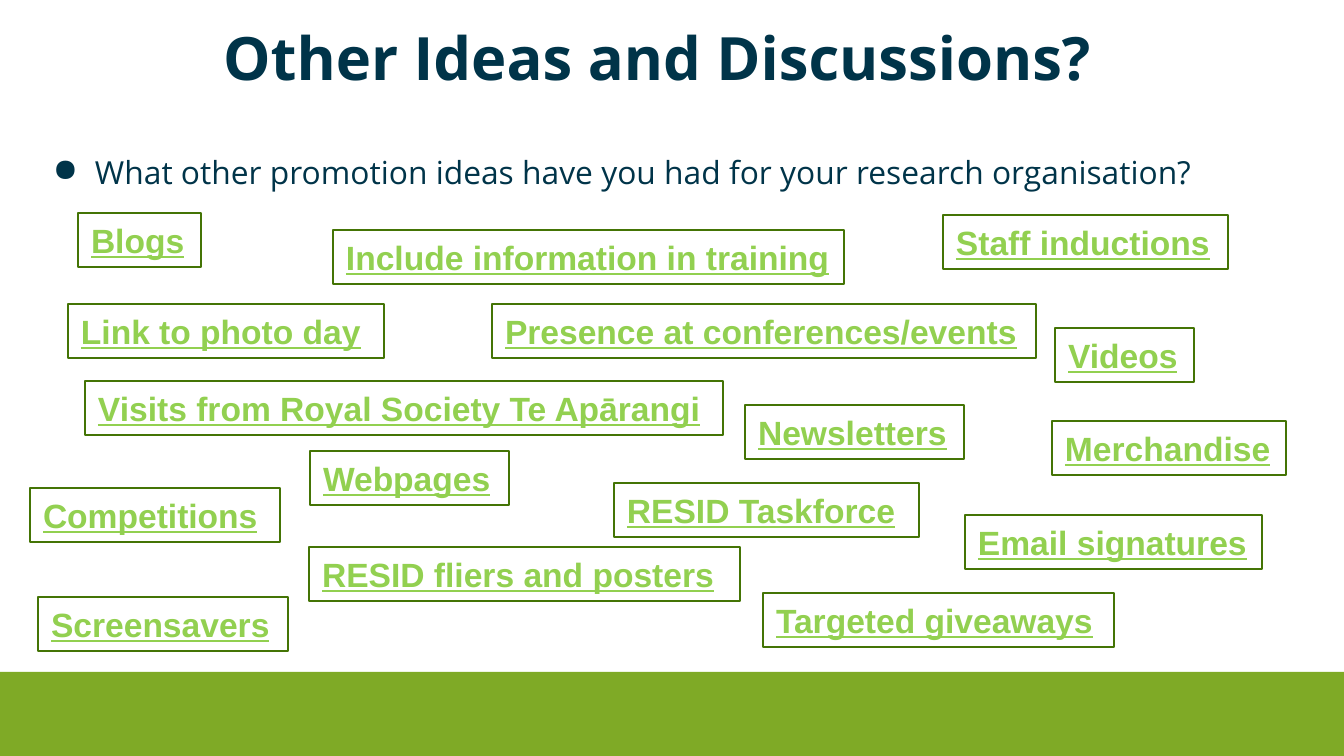
from pptx import Presentation
from pptx.dml.color import RGBColor
from pptx.enum.shapes import MSO_SHAPE
from pptx.enum.text import MSO_ANCHOR, MSO_AUTO_SIZE, PP_ALIGN
from pptx.oxml.ns import qn
from pptx.util import Pt
from lxml import etree

RECT = MSO_SHAPE.RECTANGLE
MIDDLE, TOP = MSO_ANCHOR.MIDDLE, MSO_ANCHOR.TOP
CENTER, LEFT = PP_ALIGN.CENTER, PP_ALIGN.LEFT
GROW, FIXED = MSO_AUTO_SIZE.SHAPE_TO_FIT_TEXT, MSO_AUTO_SIZE.NONE

WIDE, HIGH = 1344, 756
SCALE = 9144000 / WIDE
NAVY, GREEN, LIME, EDGE = "003449", "7FAA26", "92D050", "447405"
TAG_H = 54

# left, top, width, wording
TAGS = [
    (78, 213, 123, "Blogs"),
    (745, 405, 219, "Newsletters"),
    (310, 451, 199, "Webpages"),
    (68, 304, 316, "Link to photo day"),
    (85, 381, 638, "Visits from Royal Society Te Apārangi"),
    (30, 488, 250, "Competitions"),
    (965, 515, 297, "Email signatures"),
    (38, 597, 250, "Screensavers"),
    (614, 483, 305, "RESID Taskforce"),
    (1055, 328, 139, "Videos"),
    (1052, 421, 234, "Merchandise"),
    (492, 304, 544, "Presence at conferences/events"),
    (309, 547, 431, "RESID fliers and posters"),
    (943, 215, 285, "Staff inductions"),
    (333, 230, 511, "Include information in training"),
    (763, 593, 351, "Targeted giveaways"),
]


def px(num):
    return round(num * SCALE)


def color(code):
    return RGBColor.from_string(code)


def place(shape, box):
    shape.left, shape.top, shape.width, shape.height = map(px, box)


def set_frame(frame, pads, anchor, fit):
    frame.word_wrap = True
    frame.auto_size = fit
    frame.vertical_anchor = anchor
    (frame.margin_left, frame.margin_top,
     frame.margin_right, frame.margin_bottom) = map(px, pads)


def add_run(para, text, face, size, code, bold=False, under=False):
    run = para.add_run()
    run.text = text
    font = run.font
    font.name, font.size = face, Pt(size)
    font.bold, font.underline = bold, under
    font.color.rgb = color(code)


def add_bullet(para, mark, code, indent):
    props = para._p.get_or_add_pPr()
    props.set("marL", str(px(indent)))
    props.set("indent", str(-px(indent)))
    tint = etree.SubElement(props, qn("a:buClr"))
    etree.SubElement(tint, qn("a:srgbClr")).set("val", code)
    etree.SubElement(props, qn("a:buChar")).set("char", mark)


def add_band(slide, box):
    band = slide.shapes.add_shape(RECT, *map(px, box))
    band.shadow.inherit = False
    band.fill.solid()
    band.fill.fore_color.rgb = color(GREEN)
    band.line.fill.background()


def add_title(slide, box):
    title = slide.shapes.title
    place(title, box)
    set_frame(title.text_frame, (0, 0, 0, 0), MIDDLE, FIXED)
    para = title.text_frame.paragraphs[0]
    para.alignment = CENTER
    add_run(para, "Other Ideas and Discussions?", "Open Sans", 32, NAVY, bold=True)


def add_prompt(slide, box):
    frame = slide.shapes.add_textbox(*map(px, box)).text_frame
    set_frame(frame, (13, 13, 13, 13), TOP, FIXED)
    para = frame.paragraphs[0]
    add_bullet(para, "●", NAVY, 42)
    para.line_spacing = 1.5
    add_run(para, "What other promotion ideas have you had for your research organisation?",
            "Open Sans", 17, NAVY)


def add_tag(slide, box, text):
    """Add one outlined idea."""
    tag = slide.shapes.add_textbox(*map(px, box))
    tag.line.color.rgb = color(EDGE)
    tag.line.width = Pt(0.75)
    set_frame(tag.text_frame, (13, 7, 0, 7), TOP, GROW)
    para = tag.text_frame.paragraphs[0]
    para.alignment = LEFT
    add_run(para, text, "Arial", 18, LIME, bold=True, under=True)


def main():
    deck = Presentation()
    deck.slide_width, deck.slide_height = px(WIDE), px(HIGH)
    slide = deck.slides.add_slide(deck.slide_layouts[5])
    add_band(slide, (0, 672, WIDE, HIGH - 672))
    add_title(slide, (40, 20, 1235, 73))
    add_prompt(slide, (40, 121, 1235, 521))
    for left, top, width, text in TAGS:
        add_tag(slide, (left, top, width, TAG_H), text)
    deck.save("out.pptx")


if __name__ == "__main__":
    main()
